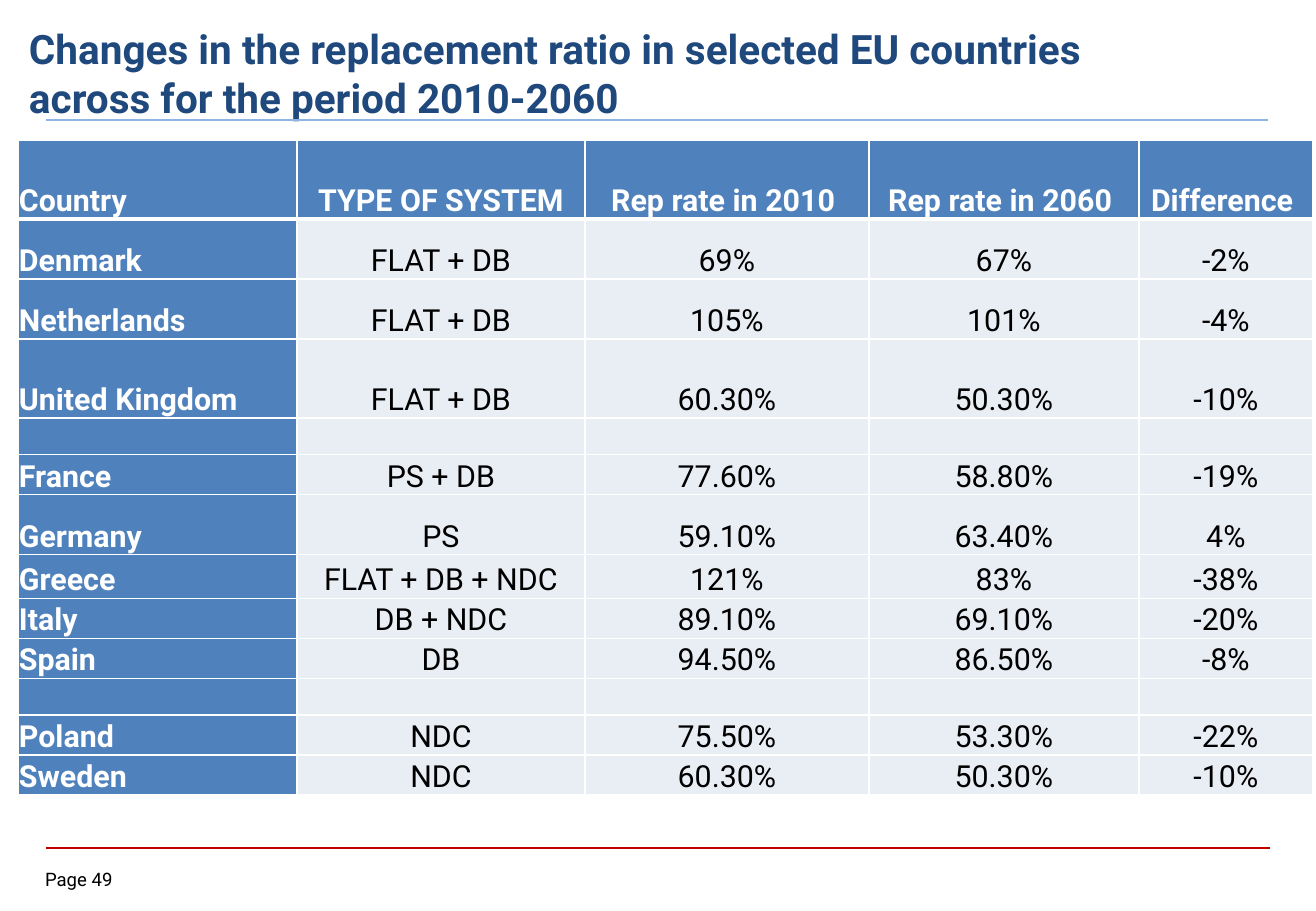
from dataclasses import dataclass

from lxml import etree
from pptx import Presentation
from pptx.dml.color import RGBColor
from pptx.enum.shapes import MSO_CONNECTOR
from pptx.enum.text import MSO_ANCHOR, MSO_AUTO_SIZE, PP_ALIGN
from pptx.oxml.ns import qn
from pptx.util import Pt

LEFT, CENTER = PP_ALIGN.LEFT, PP_ALIGN.CENTER
TOP, BOTTOM = MSO_ANCHOR.TOP, MSO_ANCHOR.BOTTOM
NO_AUTOFIT = MSO_AUTO_SIZE.NONE
STRAIGHT = MSO_CONNECTOR.STRAIGHT
EMU_PER_PX = 7526
TITLE_ONLY = 5

TITLE = "Changes in the replacement ratio in selected EU countries across for the period 2010-2060"
COLUMN_WIDTHS = [279, 288, 284, 270, 174]
HEADER = ("Country", "TYPE OF SYSTEM", "Rep rate in 2010 ", "Rep rate in 2060 ", "Difference ")
EMPTY = ("",) * len(HEADER)
ROWS = [
    (79, HEADER),
    (60, ("Denmark", "FLAT + DB", "69%", "67%", "-2%")),
    (60, ("Netherlands", "FLAT + DB", "105%", "101%", "-4%")),
    (79, ("United Kingdom", "FLAT + DB", "60.30%", "50.30%", "-10%")),
    (36, EMPTY),
    (40, ("France", "PS + DB", "77.60%", "58.80%", "-19%")),
    (60, ("Germany", "PS", "59.10%", "63.40%", "4%")),
    (44, ("Greece", "FLAT + DB + NDC", "121%", "83%", "-38%")),
    (40, ("Italy", "DB + NDC", "89.10%", "69.10%", "-20%")),
    (40, ("Spain", "DB", "94.50%", "86.50%", "-8%")),
    (36, EMPTY),
    (40, ("Poland", "NDC", "75.50%", "53.30%", "-22%")),
    (40, ("Sweden", "NDC", "60.30%", "50.30%", "-10%")),
]


@dataclass(frozen=True)
class Theme:
    font: str = "Roboto"
    title: str = "1F497D"
    text: str = "000000"
    inverse: str = "FFFFFF"
    heading_fill: str = "4F81BD"
    value_fill: str = "E9EDF4"
    border: str = "FFFFFF"
    title_rule: str = "8EB4E3"
    footer_rule: str = "C00000"
    title_size: int = 24
    table_size: int = 18
    footer_size: int = 11
    border_width: int = 1
    header_border_width: int = 3


def px(length):
    return length * EMU_PER_PX


class SlideBuilder:
    def __init__(self, slide, theme):
        self.slide = slide
        self.theme = theme

    def add_text(self, paragraph, text, size, color, bold=False, align=LEFT):
        paragraph.alignment = align
        run = paragraph.add_run()
        run.text = text
        run.font.name = self.theme.font
        run.font.size = Pt(size)
        run.font.bold = bold
        run.font.color.rgb = RGBColor.from_string(color)

    def set_frame(self, frame, margins, anchor=TOP):
        frame.word_wrap = True
        frame.auto_size = NO_AUTOFIT
        frame.vertical_anchor = anchor
        (frame.margin_left, frame.margin_top,
         frame.margin_right, frame.margin_bottom) = map(px, margins)

    def title(self, text, left, top, width, height):
        shape = self.slide.shapes.title
        shape.left, shape.top, shape.width, shape.height = map(px, (left, top, width, height))
        self.set_frame(shape.text_frame, (12, 8, 12, 6))
        self.add_text(shape.text_frame.paragraphs[0], text,
                      self.theme.title_size, self.theme.title, bold=True)

    def label(self, text, left, top, width, height):
        shape = self.slide.shapes.add_textbox(*map(px, (left, top, width, height)))
        self.set_frame(shape.text_frame, (0, 0, 0, 0))
        self.add_text(shape.text_frame.paragraphs[0], text,
                      self.theme.footer_size, self.theme.text)

    def rule(self, left, right, y, color, width):
        connector = self.slide.shapes.add_connector(STRAIGHT, *map(px, (left, y, right, y)))
        connector.line.color.rgb = RGBColor.from_string(color)
        connector.line.width = Pt(width)
        etree.SubElement(connector._element.spPr, qn("a:effectLst"))

    def cell_borders(self, cell, row):
        properties = cell._tc.get_or_add_tcPr()
        for side in "LRTB":
            under_header = (row, side) in ((0, "B"), (1, "T"))
            width = self.theme.header_border_width if under_header else self.theme.border_width
            line = etree.SubElement(properties, qn(f"a:ln{side}"), w=str(Pt(width)))
            fill = etree.SubElement(line, qn("a:solidFill"))
            etree.SubElement(fill, qn("a:srgbClr"), val=self.theme.border)

    def cell(self, cell, text, row, column):
        theme = self.theme
        heading = row == 0 or column == 0
        cell.margin_left = cell.margin_top = cell.margin_right = px(1)
        cell.margin_bottom = 0
        cell.vertical_anchor = BOTTOM
        self.cell_borders(cell, row)
        cell.fill.solid()
        cell.fill.fore_color.rgb = RGBColor.from_string(
            theme.heading_fill if heading else theme.value_fill)
        paragraph = cell.text_frame.paragraphs[0]
        if text:
            self.add_text(paragraph, text, theme.table_size,
                          theme.inverse if heading else theme.text,
                          bold=heading, align=CENTER if column else LEFT)
        else:
            end = etree.SubElement(paragraph._p, qn("a:endParaRPr"), sz=str(theme.table_size * 100))
            etree.SubElement(end, qn("a:latin"), typeface=theme.font)

    def table(self, left, top, widths, rows):
        height = sum(row_height for row_height, _ in rows)
        frame = self.slide.shapes.add_table(
            len(rows), len(widths), *map(px, (left, top, sum(widths), height)))
        table = frame.table
        table.horz_banding = False
        for column, width in zip(table.columns, widths):
            column.width = px(width)
        for row, (row_height, values) in enumerate(rows):
            table.rows[row].height = px(row_height)
            for column, text in enumerate(values):
                self.cell(table.cell(row, column), text, row, column)


def main():
    presentation = Presentation()
    presentation.slide_width = px(1316)
    presentation.slide_height = px(911)
    theme = Theme()
    slide = presentation.slides.add_slide(presentation.slide_layouts[TITLE_ONLY])
    builder = SlideBuilder(slide, theme)
    builder.rule(46, 1270, 848, theme.footer_rule, 1)
    builder.rule(46, 1268, 120, theme.title_rule, 1.5)
    builder.label("Page 49", 45, 868, 89, 27)
    builder.title(TITLE, 17, 16, 1081, 86)
    builder.table(18, 140, COLUMN_WIDTHS, ROWS)
    presentation.save("out.pptx")


if __name__ == "__main__":
    main()
